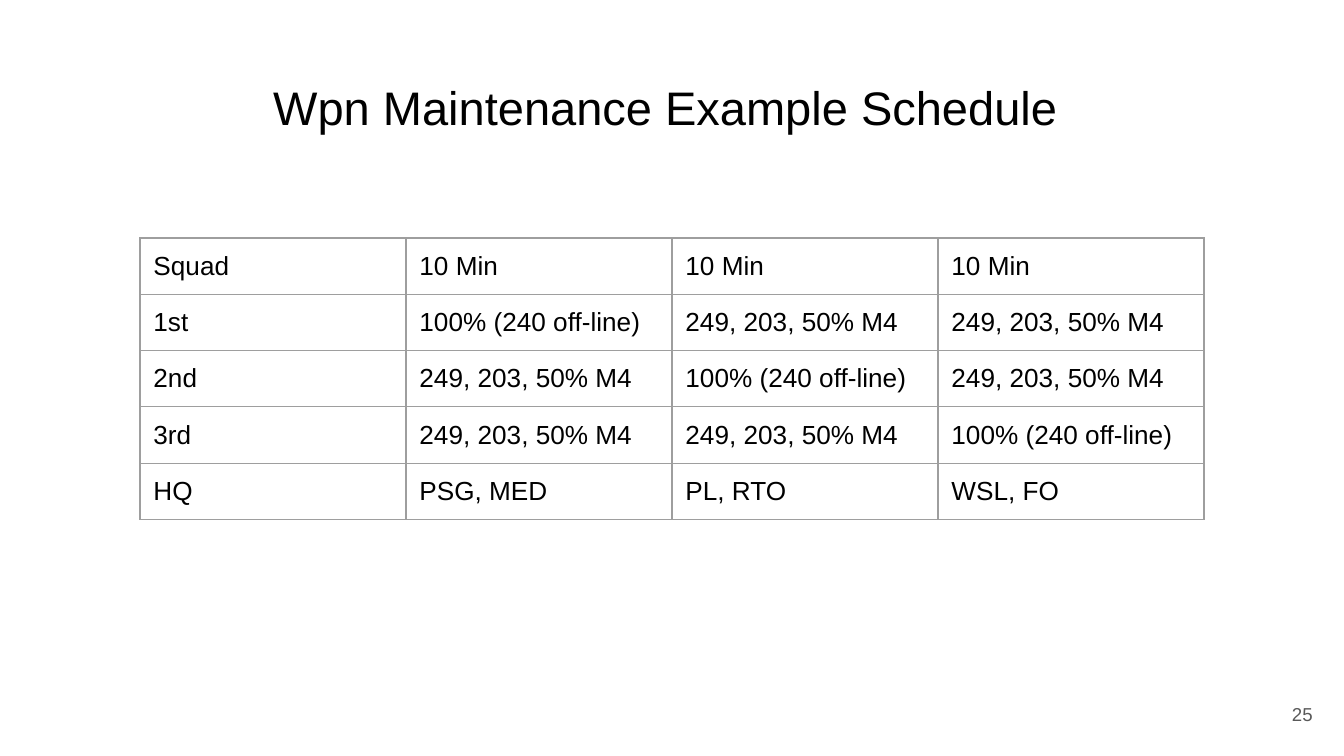
from lxml.etree import SubElement
from pptx import Presentation
from pptx.dml.color import RGBColor
from pptx.enum.text import MSO_ANCHOR, PP_ALIGN
from pptx.oxml.ns import qn
from pptx.util import Pt

INSET = Pt(7.2)
SCHEDULE = [
    ["Squad", "10 Min", "10 Min", "10 Min"],
    ["1st", "100% (240 off-line)", "249, 203, 50% M4", "249, 203, 50% M4"],
    ["2nd", "249, 203, 50% M4", "100% (240 off-line)", "249, 203, 50% M4"],
    ["3rd", "249, 203, 50% M4", "249, 203, 50% M4", "100% (240 off-line)"],
    ["HQ", "PSG, MED", "PL, RTO", "WSL, FO"],
]


def color(value):
    """Turn a hex string into a colour."""
    return RGBColor.from_string(value)


def write(frame, text, size=14, fill="000000", align=PP_ALIGN.LEFT):
    """Write one formatted paragraph into a text frame."""
    para = frame.paragraphs[0]
    para.alignment = align
    span = para.add_run()
    span.text = text
    span.font.size = Pt(size)
    span.font.name = "Arial"
    span.font.bold = False
    span.font.color.rgb = color(fill)


def set_insets(holder):
    """Give a cell or text frame equal margins on all sides."""
    holder.margin_left = holder.margin_right = INSET
    holder.margin_top = holder.margin_bottom = INSET


def set_borders(cell, fill="9E9E9E", width=0.75):
    """Draw a thin line on each side of a cell."""
    properties = cell._tc.get_or_add_tcPr()
    for side in ("a:lnL", "a:lnR", "a:lnT", "a:lnB"):
        line = SubElement(properties, qn(side), w=str(Pt(width)))
        solid = SubElement(line, qn("a:solidFill"))
        SubElement(solid, qn("a:srgbClr"), val=fill)


def add_title(page, text, left, top, width, height):
    """Place and format the title placeholder."""
    box = page.shapes.title
    box.left, box.top, box.width, box.height = map(Pt, (left, top, width, height))
    frame = box.text_frame
    frame.word_wrap = True
    frame.vertical_anchor = MSO_ANCHOR.TOP
    set_insets(frame)
    write(frame, text, size=25.2, align=PP_ALIGN.CENTER)


def add_schedule(page, rows, left, top, width, height):
    """Build the schedule table with equal rows and columns."""
    table = page.shapes.add_table(
        len(rows), len(rows[0]), Pt(left), Pt(top), Pt(width), Pt(height)
    ).table
    table.first_row = table.horz_banding = False
    for row, texts in zip(table.rows, rows):
        for cell, text in zip(row.cells, texts):
            set_insets(cell)
            set_borders(cell)
            cell.fill.background()
            write(cell.text_frame, text)


def add_page_number(page, number, left, top, width, height):
    """Place the page number in the corner."""
    box = page.shapes.add_textbox(Pt(left), Pt(top), Pt(width), Pt(height))
    frame = box.text_frame
    frame.word_wrap = True
    frame.vertical_anchor = MSO_ANCHOR.MIDDLE
    set_insets(frame)
    write(frame, number, size=10, fill="595959", align=PP_ALIGN.RIGHT)


def main():
    """Build and save the deck."""
    deck = Presentation()
    deck.slide_width, deck.slide_height = Pt(720), Pt(405)
    page = deck.slides.add_slide(deck.slide_layouts[5])
    page.background.fill.solid()
    page.background.fill.fore_color.rgb = color("FFFFFF")
    add_title(page, "Wpn Maintenance Example Schedule ", 24.5, 35, 671, 45)
    add_schedule(page, SCHEDULE, 75, 127.5, 570, 150)
    add_page_number(page, "25", 667.1, 367.2, 43.2, 31)
    deck.save("out.pptx")


if __name__ == "__main__":
    main()
